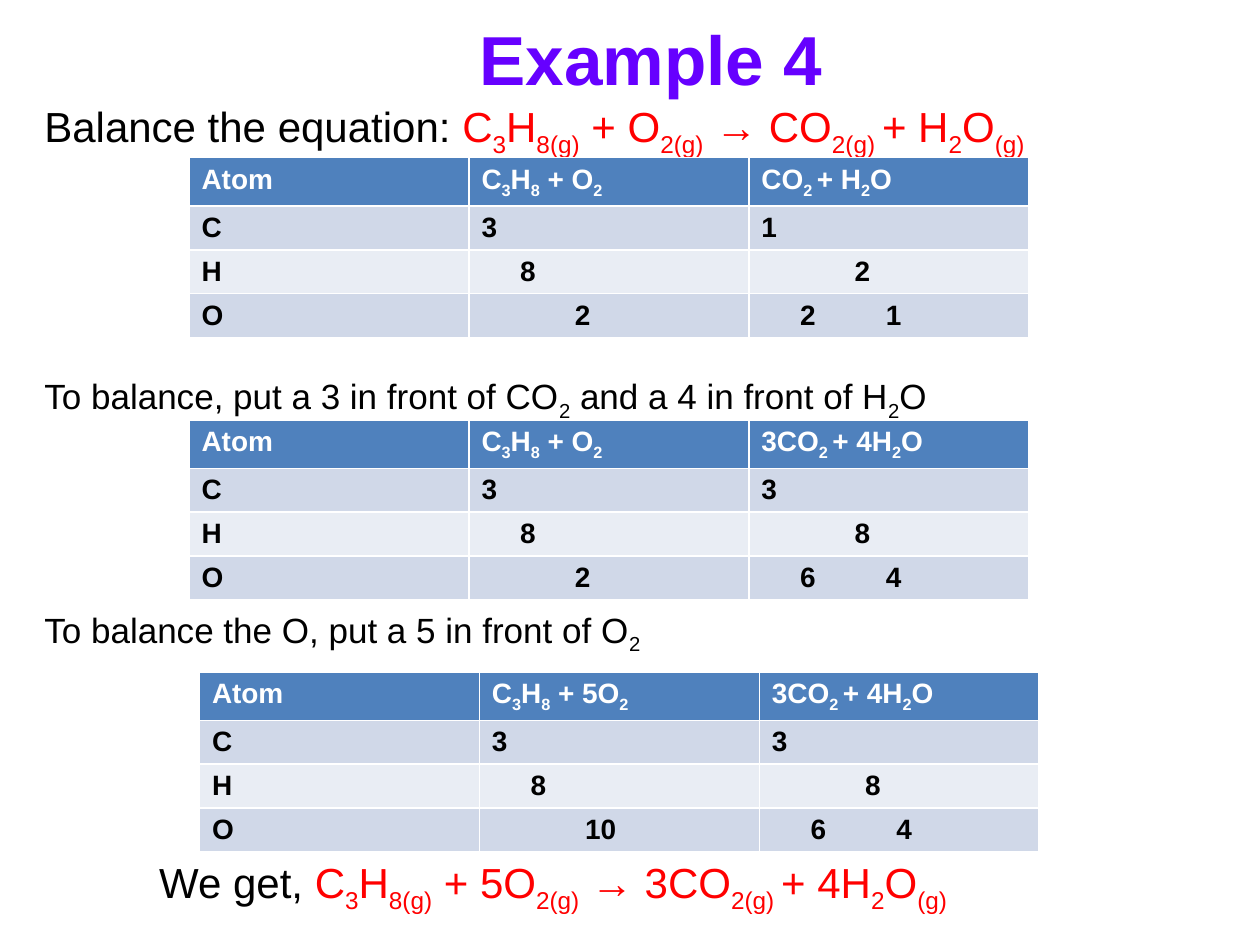
from dataclasses import dataclass

from lxml.etree import SubElement
from pptx import Presentation
from pptx.dml.color import RGBColor
from pptx.enum.text import MSO_ANCHOR, MSO_AUTO_SIZE, PP_ALIGN
from pptx.oxml.ns import qn
from pptx.util import Cm, Pt


@dataclass(frozen=True)
class Theme:
    font: str = "Arial"
    title: str = "6600FF"
    ink: str = "000000"
    red: str = "FF0000"
    white: str = "FFFFFF"
    head: str = "4F81BD"
    bands: tuple = ("D0D8E8", "E9EDF4")
    big: float = 39.6
    lead: float = 24
    step: float = 20
    cell: float = 16


THEME = Theme()
STOPS = (0.78, 1.88, 2.51)  # cm, one stop below each part of a formula

# Cells: a tab moves the count to the next stop.
START = ("C~3~H~8~ + O~2~", "CO~2 ~+ H~2~O",
         ("3", "1"), ("\t8", "\t\t2"), ("\t\t2", "\t2\t\t1"))
CARBON = ("C~3~H~8~ + O~2~", "3CO~2 ~+ 4H~2~O",
          ("3", "3"), ("\t8", "\t\t8"), ("\t\t2", "\t6\t\t4"))
DONE = ("C~3~H~8~ + 5O~2~", "3CO~2 ~+ 4H~2~O",
        ("3", "3"), ("\t8", "\t\t8"), ("\t\t10", "\t6\t\t4"))


def write(para, text, size, color, bold=False):
    """Add text to a paragraph; parts between tildes become subscripts."""
    for i, part in enumerate(text.split("~")):
        if not part:
            continue
        run = para.add_run()
        run.text = part
        font = run.font
        font.name, font.size, font.bold = THEME.font, Pt(size), bold
        font.color.rgb = RGBColor.from_string(color)
        if i % 2:
            font._element.set("baseline", "-25000")


def place(shape, box):
    shape.left, shape.top, shape.width, shape.height = (Cm(n) for n in box)


def add_title(slide, box, text):
    shape = slide.shapes.title
    place(shape, box)
    frame = shape.text_frame
    frame.auto_size = MSO_AUTO_SIZE.NONE
    frame.vertical_anchor = MSO_ANCHOR.MIDDLE
    para = frame.paragraphs[0]
    para.alignment = PP_ALIGN.CENTER
    write(para, text, THEME.big, THEME.title, True)


def add_steps(slide, box, steps):
    """Fill the body with (space before, size, plain text, red text) lines."""
    shape = slide.placeholders[1]
    place(shape, box)
    frame = shape.text_frame
    frame.auto_size = MSO_AUTO_SIZE.NONE
    frame.vertical_anchor = MSO_ANCHOR.TOP
    for i, (gap, size, text, red) in enumerate(steps):
        para = frame.add_paragraph() if i else frame.paragraphs[0]
        para.alignment = PP_ALIGN.LEFT
        para.space_before = Pt(gap)
        write(para, text, size, THEME.ink)
        write(para, red, size, THEME.red)


def set_tabs(para):
    tabs = SubElement(para._p.get_or_add_pPr(), qn("a:tabLst"))
    for stop in STOPS:
        SubElement(tabs, qn("a:tab"), pos=str(Cm(stop)), algn="l")


def add_count(slide, left, top, data):
    """Add a table that counts the atoms on both sides."""
    before, after, *counts = data
    rows = [("Atom", before, after)]
    rows += [(atom, *pair) for atom, pair in zip("CHO", counts)]
    heights = (0.95, 0.88, 0.88, 0.88)
    table = slide.shapes.add_table(
        4, 3, Cm(left), Cm(top), Cm(16.93), Cm(sum(heights))).table
    for r, (row, height) in enumerate(zip(rows, heights)):
        table.rows[r].height = Cm(height)
        fill = THEME.bands[(r - 1) % 2] if r else THEME.head
        for c, text in enumerate(row):
            cell = table.cell(r, c)
            cell.fill.solid()
            cell.fill.fore_color.rgb = RGBColor.from_string(fill)
            para = cell.text_frame.paragraphs[0]
            if "\t" in text:
                set_tabs(para)
            write(para, text, THEME.cell, THEME.ink if r else THEME.white, True)


def add_result(slide, box, text, red):
    frame = slide.shapes.add_textbox(*(Cm(n) for n in box)).text_frame
    frame.word_wrap = True
    para = frame.paragraphs[0]
    write(para, text, THEME.lead, THEME.ink)
    write(para, red, THEME.lead, THEME.red)


def main():
    deck = Presentation()
    deck.slide_width, deck.slide_height = Cm(25.4), Cm(19.05)
    slide = deck.slides.add_slide(deck.slide_layouts[0])
    add_title(slide, (2.33, 0.42, 21.59, 1.48), "Example 4")
    add_steps(slide, (0.64, 1.9, 24.13, 17.15), (
        (0, THEME.lead, "Balance the equation: ",
         "C~3~H~8(g)~ + O~2(g)~ → CO~2(g) ~+ H~2~O~(g)~"),
        (124, THEME.step,
         "To balance, put a 3 in front of CO~2~ and a 4 in front of H~2~O", ""),
        (106, THEME.step, "To balance the O, put a 5 in front of O~2~", ""),
    ))
    for left, top, data in ((3.81, 3.18, START), (3.81, 8.47, CARBON),
                            (4.02, 13.55, DONE)):
        add_count(slide, left, top, data)
    add_result(slide, (2.96, 17.15, 17.3, 1.3), "We get, ",
               "C~3~H~8(g)~ + 5O~2(g)~ → 3CO~2(g) ~+ 4H~2~O~(g)~")
    deck.save("out.pptx")


if __name__ == "__main__":
    main()
